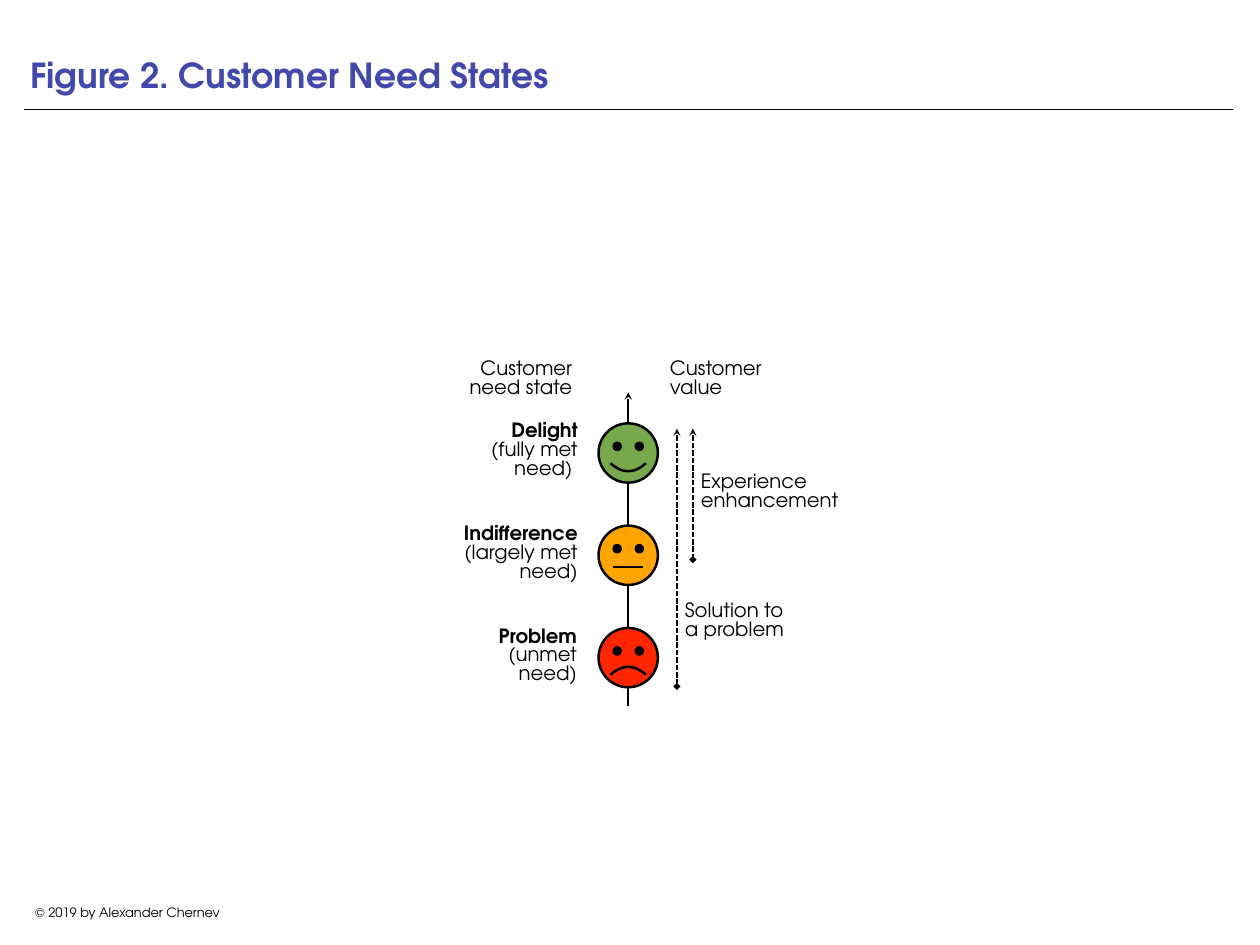
import pptx
import pptx.dml.color
import pptx.enum.dml
import pptx.enum.shapes
import pptx.enum.text
import pptx.oxml
import pptx.oxml.ns
import pptx.util

Inches, Pt = pptx.util.Inches, pptx.util.Pt
ALIGN = pptx.enum.text.PP_ALIGN
ANCHOR = pptx.enum.text.MSO_ANCHOR
OVAL = pptx.enum.shapes.MSO_SHAPE.OVAL
STRAIGHT = pptx.enum.shapes.MSO_CONNECTOR.STRAIGHT

THEME = {
    "font": "TeX Gyre Adventor",
    "title": "4349AA", "ink": "000000",
    "delight": "77A84B", "indifference": "FFA400", "problem": "FF2600",
    "title_pt": 28, "body_pt": 16, "footer_pt": 10.5,
    "rule_pt": 0.5, "arrow_pt": 1.5, "face_pt": 2,
}

TITLE = "Figure 2. Customer Need States"
FOOTER = "© 2019 by Alexander Chernev"

# Paragraphs are lists of (text, bold) runs; "\n" is a line break.
LABELS = [
    ((5.16, 4, 1.43, 0.64), ALIGN.RIGHT, [[("Customer \nneed state ", False)]]),
    ((7.49, 4, 1.43, 0.64), ALIGN.LEFT, [[("Customer \nvalue", False)]]),
    ((4.98, 4.7, 1.61, 0.86), ALIGN.RIGHT,
     [[("Delight", True)], [("(fully met need) ", False)]]),
    ((4.98, 5.86, 1.61, 0.86), ALIGN.RIGHT,
     [[("Indifference", True), (" (largely met need)", False)]]),
    ((4.97, 7.02, 1.61, 0.86), ALIGN.RIGHT,
     [[("Problem", True)], [("(unmet need)", False)]]),
    ((7.84, 5.28, 1.7, 0.81), ALIGN.LEFT, [[("Experience enhancement", False)]]),
    ((7.66, 6.73, 1.87, 0.86), ALIGN.LEFT, [[("Solution to \na problem", False)]]),
]

# Value arrows: x, top, bottom
VALUE_ARROWS = [(7.64, 4.84, 7.75), (7.82, 4.84, 6.32)]

# Faces from top to bottom: colour, mouth corner below face top, mouth bend
FACES = [("delight", 0.45, 0.12), ("indifference", 0.47, 0), ("problem", 0.53, -0.12)]
AXIS_X, AXIS_TOP, AXIS_BOTTOM = 7.09, 4.43, 7.97
FACE_TOP, FACE_STEP, FACE_SIZE = 4.78, 1.155, 0.67
EYE_DROP, EYE_SIZE, EYE_OFFSET = 0.22, 0.08, 0.125
CURVED_MOUTH, FLAT_MOUTH, MOUTH_STEPS = 0.4, 0.34, 24


def rgb(name):
    return pptx.dml.color.RGBColor.from_string(THEME[name])


def add_run(p, text, size, color="ink", bold=False):
    for i, line in enumerate(text.split("\n")):
        if i:
            p.add_line_break()
        r = p.add_run()
        r.text = line
        r.font.name = THEME["font"]
        r.font.size = Pt(THEME[size])
        r.font.bold = bold
        r.font.color.rgb = rgb(color)


def set_margins(tf, inset):
    tf.margin_left = tf.margin_right = tf.margin_top = tf.margin_bottom = Inches(inset)


def add_label(shapes, box, align, paragraphs):
    tf = shapes.add_textbox(*map(Inches, box)).text_frame
    tf.word_wrap = True
    set_margins(tf, 0.07)
    for i, runs in enumerate(paragraphs):
        p = tf.add_paragraph() if i else tf.paragraphs[0]
        p.alignment = align
        p.line_spacing = 0.8
        for text, bold in runs:
            add_run(p, text, "body_pt", bold=bold)


def add_line(shapes, start, end, width, head=None, tail=None, dashed=False):
    sp = shapes.add_connector(STRAIGHT, *map(Inches, start + end))
    sp.line.color.rgb = rgb("ink")
    sp.line.width = Pt(THEME[width])
    if dashed:
        sp.line.dash_style = pptx.enum.dml.MSO_LINE.SQUARE_DOT
    ln = sp.line._get_or_add_ln()
    for tag, kind in (("a:headEnd", head), ("a:tailEnd", tail)):
        if kind:
            end_mark = pptx.oxml.parse_xml(f"<{tag} {pptx.oxml.ns.nsdecls('a')}/>")
            end_mark.set("type", kind)
            ln.append(end_mark)
    sp._element.spPr.append(
        pptx.oxml.parse_xml(f"<a:effectLst {pptx.oxml.ns.nsdecls('a')}/>"))


def ink_outline(sp):
    sp.shadow.inherit = False
    sp.line.color.rgb = rgb("ink")
    sp.line.width = Pt(THEME["face_pt"])


def add_disc(shapes, cx, top, size, color):
    sp = shapes.add_shape(OVAL, *map(Inches, (cx - size / 2, top, size, size)))
    sp.fill.solid()
    sp.fill.fore_color.rgb = rgb(color)
    ink_outline(sp)


def add_mouth(shapes, cx, y, bend):
    """Draw a flat line, or a cubic arc whose control points sit `bend` below y."""
    if not bend:
        half = FLAT_MOUTH / 2
        add_line(shapes, (cx - half, y), (cx + half, y), "face_pt")
        return
    steps = [i / MOUTH_STEPS for i in range(MOUTH_STEPS + 1)]
    points = [(Inches(cx + (t - 0.5) * CURVED_MOUTH),
               Inches(y + 3 * t * (1 - t) * bend)) for t in steps]
    builder = shapes.build_freeform(*points[0])
    builder.add_line_segments(points[1:], close=False)
    sp = builder.convert_to_shape()
    sp.fill.background()
    ink_outline(sp)


def add_face(shapes, top, color, mouth_drop, bend):
    group = shapes.add_group_shape().shapes
    add_disc(group, AXIS_X, top, FACE_SIZE, color)
    for side in (-1, 1):
        add_disc(group, AXIS_X + side * EYE_OFFSET, top + EYE_DROP, EYE_SIZE, "ink")
    add_mouth(group, AXIS_X, top + mouth_drop, bend)


def add_title(title):
    title.left, title.top, title.width, title.height = map(Inches, (0.27, 0, 13.64, 1.15))
    tf = title.text_frame
    tf.word_wrap = True
    tf.vertical_anchor = ANCHOR.BOTTOM
    set_margins(tf, 0.07)
    tf.paragraphs[0].alignment = ALIGN.LEFT
    add_run(tf.paragraphs[0], TITLE, "title_pt", "title", True)


def add_footer(shapes):
    tf = shapes.add_textbox(*map(Inches, (0.27, 10.16, 2.34, 0.28))).text_frame
    tf.word_wrap = False
    tf.paragraphs[0].alignment = ALIGN.CENTER
    add_run(tf.paragraphs[0], FOOTER, "footer_pt")


def main():
    prs = pptx.Presentation()
    prs.slide_width, prs.slide_height = Inches(14.22), Inches(10.67)
    s = prs.slides.add_slide(prs.slide_layouts[5])
    add_title(s.shapes.title)
    add_footer(s.shapes)
    add_line(s.shapes, (0.27, 1.24), (13.92, 1.24), "rule_pt")
    for label in LABELS:
        add_label(s.shapes, *label)
    for x, top, bottom in VALUE_ARROWS:
        add_line(s.shapes, (x, top), (x, bottom), "arrow_pt", "stealth", "diamond", True)
    add_line(s.shapes, (AXIS_X, AXIS_TOP), (AXIS_X, AXIS_BOTTOM), "face_pt", "stealth")
    for i, face in enumerate(FACES):
        add_face(s.shapes, FACE_TOP + i * FACE_STEP, *face)
    prs.save("out.pptx")


if __name__ == "__main__":
    main()
